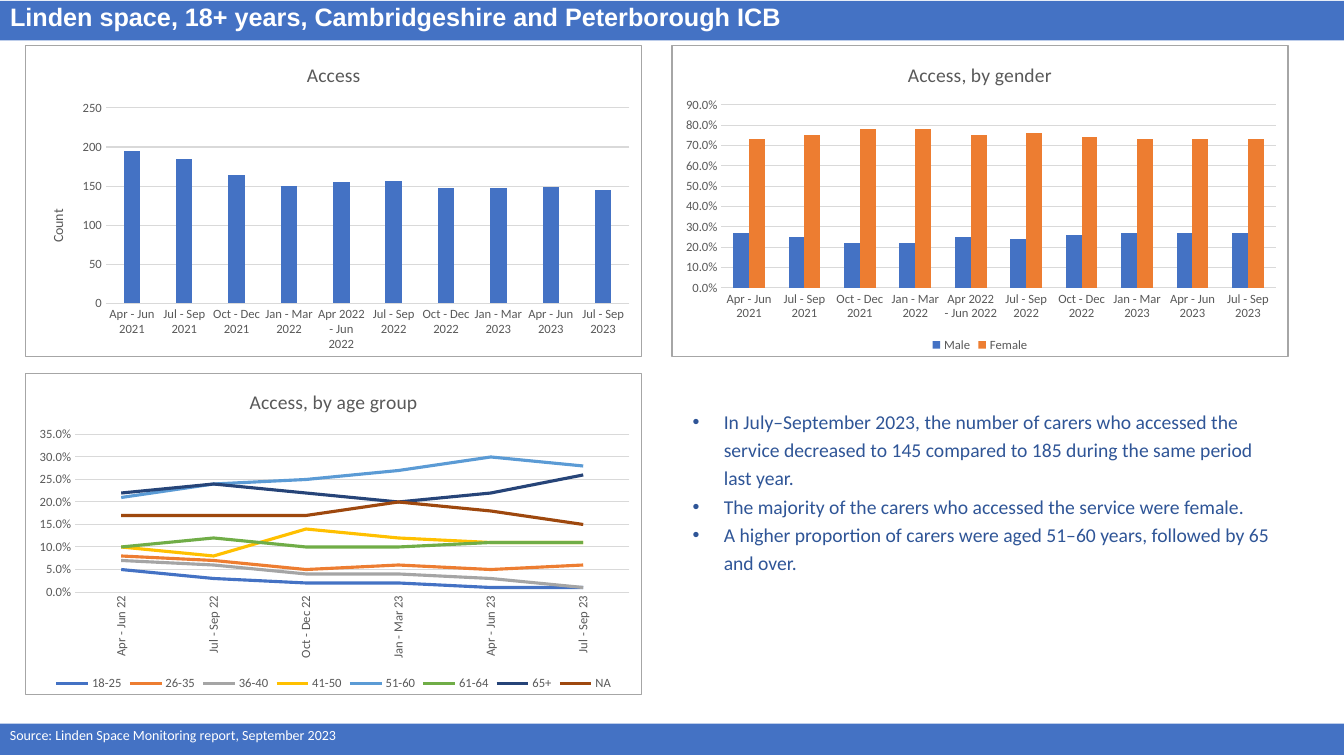
from dataclasses import dataclass

from lxml import etree
from pptx import Presentation
from pptx import util as u
from pptx.chart import data as chart_data
from pptx.dml.color import RGBColor
from pptx.enum import chart as ch
from pptx.enum import shapes, text
from pptx.oxml import parse_xml
from pptx.oxml.ns import nsdecls, qn


@dataclass(frozen=True)
class Theme:
    band: str = "4472C4"
    white: str = "FFFFFF"
    body: str = "2F5597"
    label: str = "595959"
    grid: str = "D9D9D9"
    border: str = "A6A6A6"
    series: tuple = ("4472C4", "ED7D31", "A5A5A5", "FFC000",
                     "5B9BD5", "70AD47", "264478", "9E480E")
    heading_font: str = "Arial"
    font: str = "Calibri"
    heading_size: int = 18
    text_size: int = 14
    small_size: int = 10
    label_size: int = 9


theme = Theme()


def style_font(font, size, color, name=theme.font, bold=False):
    font.size = u.Pt(size)
    font.name = name
    font.bold = bold
    font.color.rgb = RGBColor.from_string(color)


def add_run(paragraph, words, *style, **options):
    run = paragraph.add_run()
    run.text = words
    style_font(run.font, *style, **options)


presentation = Presentation()
presentation.slide_width = u.Inches(13.33)
presentation.slide_height = u.Inches(7.5)
slide = presentation.slides.add_slide(presentation.slide_layouts[5])

for index, (top, height) in enumerate([(0.01, 0.39), (7.18, 0.31)]):
    band = slide.shapes.add_shape(shapes.MSO_SHAPE.RECTANGLE, 0, u.Inches(top),
                                  presentation.slide_width, u.Inches(height))
    band.shadow.inherit = False
    band.fill.solid()
    band.fill.fore_color.rgb = RGBColor.from_string(theme.band)
    band.line.fill.background()
    slide.shapes._spTree.insert(2 + index, band._element)

title = slide.shapes.title
title.left, title.top = 0, 0
title.width, title.height = presentation.slide_width, u.Inches(0.37)
title.text_frame.auto_size = text.MSO_AUTO_SIZE.NONE
title.text_frame.vertical_anchor = text.MSO_ANCHOR.MIDDLE
paragraph = title.text_frame.paragraphs[0]
paragraph.alignment = text.PP_ALIGN.LEFT
paragraph.line_spacing = 0.9
add_run(paragraph, "Linden space, 18+ years, Cambridgeshire and Peterborough ICB",
        theme.heading_size, theme.white, name=theme.heading_font, bold=True)

source = slide.shapes.add_textbox(0, u.Inches(7.16), u.Inches(10.46), u.Inches(0.27))
source.text_frame.word_wrap = True
add_run(source.text_frame.paragraphs[0],
        "Source: Linden Space Monitoring report, September 2023",
        theme.small_size, theme.white)

quarters = ["Apr - Jun 2021", "Jul - Sep 2021", "Oct - Dec 2021", "Jan - Mar 2022",
            "Apr 2022 - Jun 2022", "Jul - Sep 2022", "Oct - Dec 2022",
            "Jan - Mar 2023", "Apr - Jun 2023", "Jul - Sep 2023"]
recent_quarters = ["Apr - Jun 22", "Jul - Sep 22", "Oct - Dec 22",
                   "Jan - Mar 23", "Apr - Jun 23", "Jul - Sep 23"]
column, line = ch.XL_CHART_TYPE.COLUMN_CLUSTERED, ch.XL_CHART_TYPE.LINE
charts = [
    dict(title="Access", kind=column, at=(0.25, 0.45, 6.12, 3.09), categories=quarters,
         plot=(0.13, 0.2, 0.85, 0.63), top=250, step=50, format="General",
         gap=219, overlap=-27, axis_title="Count",
         series={"Series 1": [195, 185, 164, 150, 155, 157, 147, 147, 149, 145]}),
    dict(title="Access, by gender", kind=column, at=(6.66, 0.45, 6.12, 3.09),
         categories=quarters, plot=(0.08, 0.19, 0.9, 0.59), top=0.9, step=0.1,
         format="0.0%", gap=150, overlap=0,
         series={
             "Male": [0.27, 0.25, 0.22, 0.22, 0.25, 0.24, 0.26, 0.27, 0.27, 0.27],
             "Female": [0.73, 0.75, 0.78, 0.78, 0.75, 0.76, 0.74, 0.73, 0.73, 0.73]}),
    dict(title="Access, by age group", kind=line, at=(0.25, 3.7, 6.12, 3.2),
         categories=recent_quarters, plot=(0.08, 0.19, 0.9, 0.49), top=0.35, step=0.05,
         format="0.0%",
         series={
             "18-25": [0.05, 0.03, 0.02, 0.02, 0.01, 0.01],
             "26-35": [0.08, 0.07, 0.05, 0.06, 0.05, 0.06],
             "36-40": [0.07, 0.06, 0.04, 0.04, 0.03, 0.01],
             "41-50": [0.1, 0.08, 0.14, 0.12, 0.11, 0.11],
             "51-60": [0.21, 0.24, 0.25, 0.27, 0.3, 0.28],
             "61-64": [0.1, 0.12, 0.1, 0.1, 0.11, 0.11],
             "65+": [0.22, 0.24, 0.22, 0.2, 0.22, 0.26],
             "NA": [0.17, 0.17, 0.17, 0.2, 0.18, 0.15]}),
]

for item in charts:
    values = chart_data.CategoryChartData(number_format=item["format"])
    values.categories = item["categories"]
    for name, numbers in item["series"].items():
        values.add_series(name, numbers)
    chart = slide.shapes.add_chart(item["kind"], *map(u.Inches, item["at"]), values).chart
    chart.font.size = u.Pt(theme.small_size)
    chart.font.name = theme.font
    chart.has_title = True
    add_run(chart.chart_title.text_frame.paragraphs[0], item["title"],
            theme.text_size, theme.label)
    chart.chart_title.include_in_layout = False
    chart.has_legend = len(item["series"]) > 1
    if chart.has_legend:
        chart.legend.position = ch.XL_LEGEND_POSITION.BOTTOM
        chart.legend.include_in_layout = False
        style_font(chart.legend.font, theme.label_size, theme.label)

    category_axis, value_axis = chart.category_axis, chart.value_axis
    for axis in (category_axis, value_axis):
        axis.major_tick_mark = axis.minor_tick_mark = ch.XL_TICK_MARK.NONE
        style_font(axis.tick_labels.font, theme.label_size, theme.label)
    category_axis.format.line.color.rgb = RGBColor.from_string(theme.grid)
    category_axis.format.line.width = u.Pt(0.75)
    value_axis.format.line.fill.background()
    value_axis.minimum_scale = 0
    value_axis.maximum_scale = item["top"]
    value_axis.major_unit = item["step"]
    value_axis.tick_labels.number_format = item["format"]
    value_axis.tick_labels.number_format_is_linked = False
    value_axis.has_major_gridlines = True
    value_axis.major_gridlines.format.line.color.rgb = RGBColor.from_string(theme.grid)
    value_axis.major_gridlines.format.line.width = u.Pt(0.75)
    if "axis_title" in item:
        add_run(value_axis.axis_title.text_frame.paragraphs[0], item["axis_title"],
                theme.small_size, theme.label)

    plot = chart.plots[0]
    plot.vary_by_categories = False
    if item["kind"] == column:
        plot.gap_width = item["gap"]
        plot.overlap = item["overlap"]
    else:
        label_body = category_axis._element.find(qn("c:txPr")).find(qn("a:bodyPr"))
        label_body.set("rot", "-5400000")
        label_body.set("vert", "horz")
    for series, color in zip(plot.series, theme.series):
        if item["kind"] == column:
            series.format.fill.solid()
            series.format.fill.fore_color.rgb = RGBColor.from_string(color)
        else:
            series.smooth = False
            series.marker.style = ch.XL_MARKER_STYLE.NONE
            series.format.line.color.rgb = RGBColor.from_string(color)
            series.format.line.width = u.Pt(2.25)

    chart_space = chart._chartSpace
    chart_space.find(qn("c:date1904")).addnext(
        parse_xml(f'<c:roundedCorners {nsdecls("c")} val="0"/>'))
    chart_space.find(qn("c:txPr")).addprevious(parse_xml(
        f'<c:spPr {nsdecls("c", "a")}><a:solidFill><a:srgbClr val="{theme.white}"/>'
        f'</a:solidFill><a:ln w="9525"><a:solidFill><a:srgbClr val="{theme.border}"/>'
        '</a:solidFill></a:ln></c:spPr>'))
    plot_area = chart_space.find(qn("c:chart")).find(qn("c:plotArea"))
    for layout in plot_area.findall(qn("c:layout")):
        plot_area.remove(layout)
    layout = parse_xml(f'<c:layout {nsdecls("c")}><c:manualLayout/></c:layout>')
    settings = [("layoutTarget", "inner"), ("xMode", "edge"), ("yMode", "edge"),
                *zip("xywh", item["plot"])]
    for tag, setting in settings:
        etree.SubElement(layout[0], qn(f"c:{tag}"), val=str(setting))
    plot_area.insert(0, layout)

findings = slide.shapes.add_textbox(*map(u.Inches, (6.77, 3.97, 6.01, 2.93)))
frame = findings.text_frame
frame.word_wrap = True
points = [
    "In July–September 2023, the number of carers who accessed the service decreased "
    "to 145 compared to 185 during the same period last year.",
    "The majority of the carers who accessed the service were female.",
    "A higher proportion of carers were aged 51–60 years, followed by 65 and over.",
]
for index, point in enumerate(points):
    paragraph = frame.add_paragraph() if index else frame.paragraphs[0]
    paragraph.line_spacing = 1.2
    properties = paragraph._p.get_or_add_pPr()
    properties.set("marL", str(u.Inches(0.31)))
    properties.set("indent", str(-u.Inches(0.31)))
    etree.SubElement(properties, qn("a:buFont"), typeface=theme.heading_font)
    etree.SubElement(properties, qn("a:buChar"), char="•")
    add_run(paragraph, point, theme.text_size, theme.body)

presentation.save("out.pptx")
